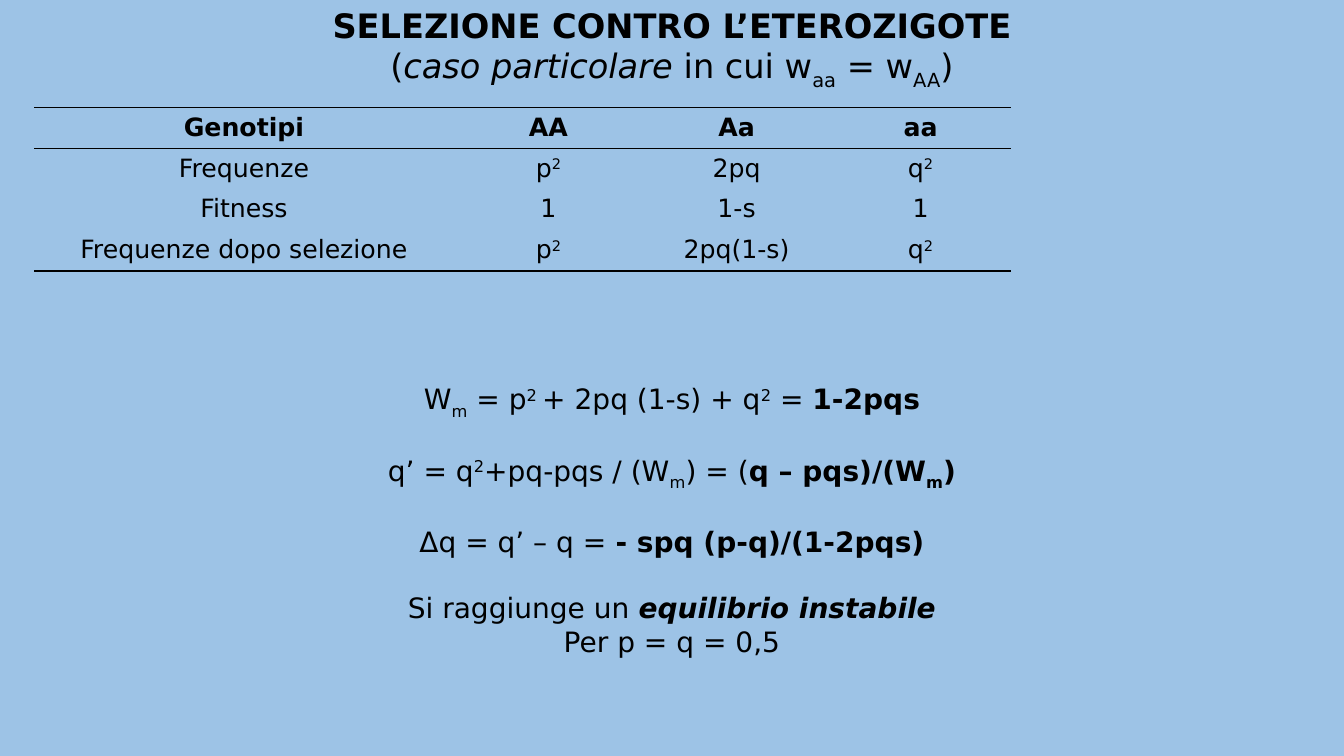
from dataclasses import dataclass

from lxml import etree
from pptx import Presentation
from pptx import util as u
from pptx.dml import color
from pptx.enum import text
from pptx.oxml import ns

FONT = "DejaVu Sans"
BLACK = "000000"
SKY = "9DC3E6"
SUBSCRIPT, SUPERSCRIPT = -25, 30


@dataclass
class Span:
    words: str
    bold: bool = False
    italic: bool = False
    shift: int = 0


@dataclass
class Line:
    spans: list[Span]
    space_before: float = 0


def sub(words: str, bold: bool = False) -> Span:
    return Span(words, bold=bold, shift=SUBSCRIPT)


def sup(words: str) -> Span:
    return Span(words, shift=SUPERSCRIPT)


def rgb(value: str) -> color.RGBColor:
    return color.RGBColor.from_string(value)


def write_lines(frame, lines: list[Line], size: float) -> None:
    for index, line in enumerate(lines):
        para = frame.paragraphs[0] if index == 0 else frame.add_paragraph()
        para.alignment = text.PP_ALIGN.CENTER
        if line.space_before:
            para.space_before = u.Pt(line.space_before)
        for span in line.spans:
            run = para.add_run()
            run.text = span.words
            font = run.font
            font.name, font.size = FONT, u.Pt(size)
            font.bold, font.italic = span.bold, span.italic
            font.color.rgb = rgb(BLACK)
            if span.shift:
                run._r.get_or_add_rPr().set("baseline", str(span.shift * 1000))


def add_text(page, top: float, height: float, lines: list[Line], size: float) -> None:
    box = page.shapes.add_textbox(0, u.Inches(top), deck.slide_width, u.Inches(height))
    box.text_frame.word_wrap = True
    box.text_frame.auto_size = text.MSO_AUTO_SIZE.SHAPE_TO_FIT_TEXT
    write_lines(box.text_frame, lines, size)


def set_borders(cell, ruled: str) -> None:
    """Draw the named sides (T, B) in black and hide the others."""
    properties = cell._tc.get_or_add_tcPr()
    for side in "LRTB":
        border = etree.SubElement(properties, ns.qn(f"a:ln{side}"), w=str(u.Pt(1)))
        if side in ruled:
            fill = etree.SubElement(border, ns.qn("a:solidFill"))
            etree.SubElement(fill, ns.qn("a:srgbClr"), val=BLACK)
        else:
            etree.SubElement(border, ns.qn("a:noFill"))


def add_genotype_table(page, rows: list[list[list[Span]]]) -> None:
    widths = [4.16, 1.88, 1.85, 1.8]
    table = page.shapes.add_table(
        len(rows), len(widths), u.Inches(0.34), u.Inches(1.07),
        u.Inches(sum(widths)), u.Inches(1.62)).table
    table.first_row = table.horz_banding = False
    for column, width in zip(table.columns, widths):
        column.width = u.Inches(width)
    # Rules above and below the header, and under the last row
    rules = ["TB", "T", "", "B"]
    for row_index, row in enumerate(rows):
        for column_index, spans in enumerate(row):
            cell = table.cell(row_index, column_index)
            set_borders(cell, rules[row_index])
            cell.fill.background()
            write_lines(cell.text_frame, [Line(spans)], 18)


# Page
deck = Presentation()
deck.slide_width, deck.slide_height = u.Inches(13.33), u.Inches(7.5)
page = deck.slides.add_slide(deck.slide_layouts[6])
page.background.fill.solid()
page.background.fill.fore_color.rgb = rgb(SKY)

# Title
add_text(page, 0, 0.91, [
    Line([Span("SELEZIONE CONTRO L’ETEROZIGOTE", bold=True)]),
    Line([Span("("), Span("caso particolare ", italic=True), Span("in cui w"),
          sub("aa"), Span(" = w"), sub("AA"), Span(")")]),
], 24)

# Genotype table
p_squared = [Span("p"), sup("2")]
q_squared = [Span("q"), sup("2")]
add_genotype_table(page, [
    [[Span(name, bold=True)] for name in ("Genotipi", "AA", "Aa", "aa")],
    [[Span("Frequenze")], p_squared, [Span("2pq")], q_squared],
    [[Span(value)] for value in ("Fitness", "1", "1-s", "1")],
    [[Span("Frequenze dopo selezione")], p_squared, [Span("2pq(1-s)")], q_squared],
])

# Formulas and equilibrium
GAP = 23.5
add_text(page, 3.74, 2.81, [
    Line([Span("W"), sub("m"), Span(" = p"), sup("2 "), Span("+ 2pq (1-s) + q"),
          sup("2"), Span(" = "), Span("1-2pqs", bold=True)]),
    Line([Span("q’ = q"), sup("2"), Span("+pq-pqs / (W"), sub("m"), Span(") = ("),
          Span("q – pqs)/(W", bold=True), sub("m", bold=True), Span(")", bold=True)], GAP),
    Line([Span("Δq = q’ – q = "), Span("- spq (p-q)/(1-2pqs)", bold=True)], GAP),
    Line([Span("Si raggiunge un "),
          Span("equilibrio instabile", bold=True, italic=True)], GAP),
    Line([Span("Per p = q = 0,5")]),
], 20)

deck.save("out.pptx")
